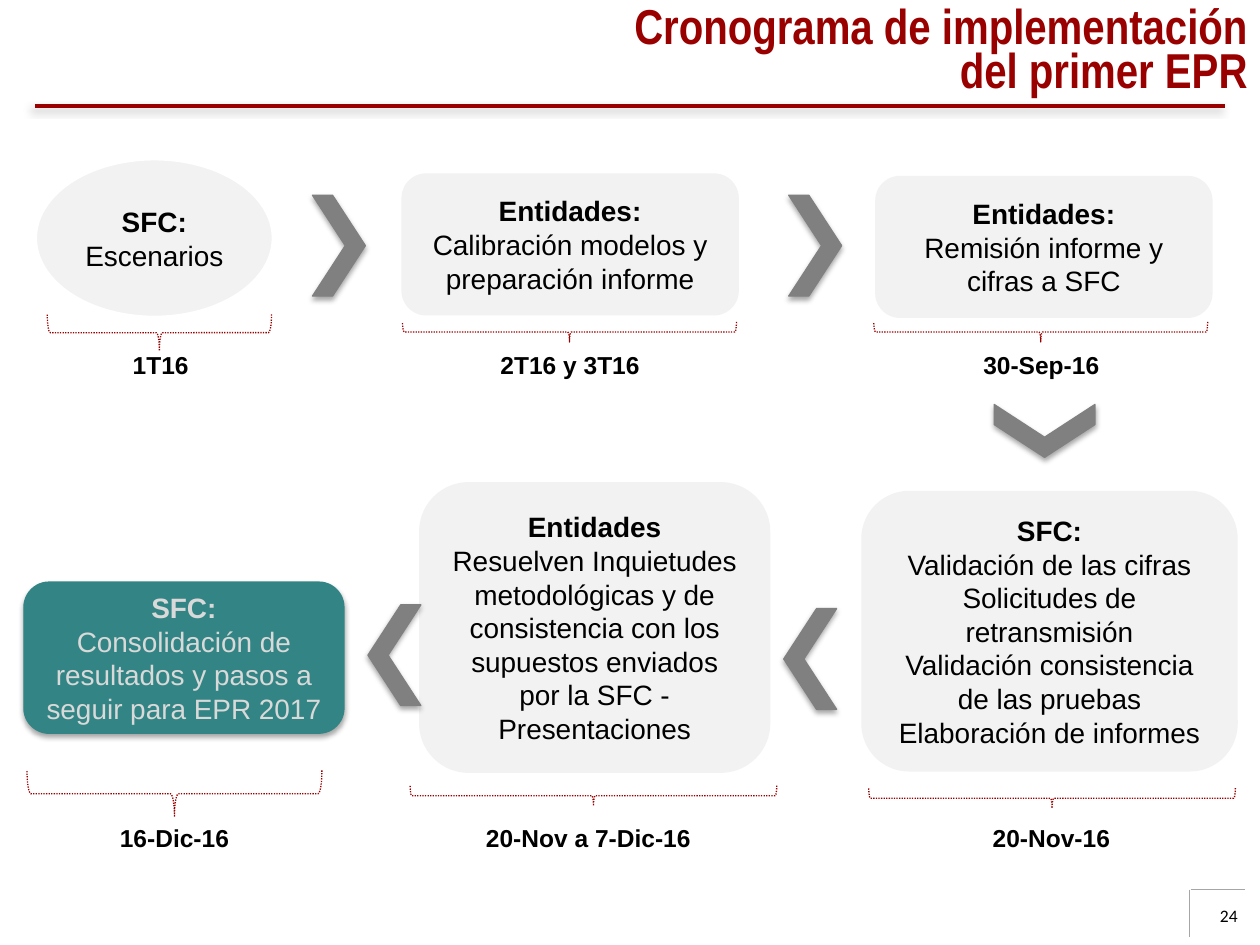
from lxml import etree
from pptx import Presentation
from pptx.enum.dml import MSO_LINE
from pptx.enum.shapes import MSO_CONNECTOR, MSO_SHAPE
from pptx.enum.text import MSO_ANCHOR, MSO_AUTO_SIZE, PP_ALIGN
from pptx.dml.color import RGBColor
from pptx.oxml import parse_xml
from pptx.oxml.ns import nsdecls, qn
from pptx.util import Pt

PX = 9144
OVAL, ROUND = MSO_SHAPE.OVAL, MSO_SHAPE.ROUNDED_RECTANGLE
CHEVRON, BRACE = MSO_SHAPE.CHEVRON, MSO_SHAPE.LEFT_BRACE
DOTS, LINE = MSO_LINE.ROUND_DOT, MSO_CONNECTOR.STRAIGHT
MID, TOP = MSO_ANCHOR.MIDDLE, MSO_ANCHOR.TOP
CENTER, RIGHT = PP_ALIGN.CENTER, PP_ALIGN.RIGHT
COLORS = {
    "red": "990000", "black": "000000", "white": "FFFFFF", "pale": "F2F2F2",
    "gray": "808080", "rule": "A6A6A6", "teal": "338585", "light": "D9D9D9",
}


def tint(name):
    return RGBColor.from_string(COLORS[name])


class Deck:
    font = "Arial"

    def __init__(self, wide, high):
        self.file = Presentation()
        self.file.slide_width, self.file.slide_height = wide * PX, high * PX
        self.slide = self.file.slides.add_slide(self.file.slide_layouts[5])
        self.shapes = self.slide.shapes

    def style(self, para, size, color, bold, align=CENTER, font=None):
        para.alignment = align
        for run in para.runs:
            run.font.name = font or self.font
            run.font.size = Pt(size)
            run.font.bold = bold
            run.font.color.rgb = tint(color)

    def shade(self, shape, blur, dist, angle, alpha):
        props = shape._element.spPr
        for old in props.findall(qn("a:effectLst")):
            props.remove(old)
        props.append(parse_xml(
            f'<a:effectLst {nsdecls("a")}><a:outerShdw blurRad="{Pt(blur)}" '
            f'dist="{Pt(dist)}" dir="{angle * 60000}" algn="ctr" rotWithShape="0">'
            f'<a:srgbClr val="{COLORS["black"]}"><a:alpha val="{alpha * 1000}"/>'
            '</a:srgbClr></a:outerShdw></a:effectLst>'))

    def title(self, text, x, y, w, h):
        shape = self.shapes.title
        shape.left, shape.top, shape.width, shape.height = [n * PX for n in (x, y, w, h)]
        frame = shape.text_frame
        frame.text = text
        frame.word_wrap = True
        frame.auto_size = MSO_AUTO_SIZE.NONE
        frame.vertical_anchor = TOP
        para = frame.paragraphs[0]
        self.style(para, 28, "red", True, RIGHT, "Arial Narrow")
        para.line_spacing = 0.75
        props = para._p.get_or_add_pPr()
        props.set("marL", str(56 * PX))
        props.set("indent", str(-56 * PX))

    def line(self, x1, y1, x2, y2, color, width):
        line = self.shapes.add_connector(LINE, x1 * PX, y1 * PX, x2 * PX, y2 * PX)
        line.line.color.rgb = tint(color)
        line.line.width = Pt(width)
        etree.SubElement(line._element.spPr, qn("a:effectLst"))
        return line

    def shape(self, kind, x, y, w, h, fill, edge, width):
        shape = self.shapes.add_shape(kind, x * PX, y * PX, w * PX, h * PX)
        shape.shadow.inherit = False
        if fill:
            shape.fill.solid()
            shape.fill.fore_color.rgb = tint(fill)
        else:
            shape.fill.background()
        shape.line.color.rgb = tint(edge)
        shape.line.width = Pt(width)
        return shape

    def box(self, kind, x, y, w, h, lines, fill="pale", edge="pale", width=2, color="black"):
        shape = self.shape(kind, x, y, w, h, fill, edge, width)
        frame = shape.text_frame
        frame.text = "\n".join(lines)
        frame.word_wrap = True
        frame.vertical_anchor = MID
        for i, para in enumerate(frame.paragraphs):
            self.style(para, 16, color, i == 0)
        return shape

    def arrow(self, x, y, turn=0):
        shape = self.shape(CHEVRON, x, y, 42, 80, "gray", "gray", 0.75)
        shape.adjustments[0] = 0.62
        shape.rotation = turn
        self.shade(shape, 3.1, 1.8, 90, 35)

    def brace(self, x, y, w, h):
        shape = self.shape(BRACE, x + (w - h) // 2, y + (h - w) // 2, h, w, None, "red", 0.75)
        shape.rotation = 270
        shape.line.dash_style = DOTS

    def label(self, text, x, y, w, h=34, size=14, bold=True, align=CENTER, font=None):
        frame = self.shapes.add_textbox(x * PX, y * PX, w * PX, h * PX).text_frame
        frame.text = text
        frame.word_wrap = True
        self.style(frame.paragraphs[0], size, "black", bold, align, font)


def main():
    deck = Deck(1000, 750)
    deck.title("Cronograma de implementación del primer EPR", 445, 2, 555, 81)
    rule = deck.line(28, 84, 972, 84, "red", 2)
    deck.shade(rule, 4, 3, 135, 40)
    deck.line(945, 706, 988, 706, "rule", 0.25)
    deck.line(944, 706, 944, 744, "rule", 0.25)
    deck.label("24", 930, 713, 62, 40, 10, False, RIGHT, "Calibri")

    deck.box(OVAL, 28, 126, 189, 126, ["SFC:", "Escenarios"], edge="white")
    for x, y, w, h, lines in (
        (320, 139, 265, 110, ["Entidades:", "Calibración modelos y preparación informe"]),
        (696, 141, 265, 110, ["Entidades:", "Remisión informe y cifras a SFC"]),
        (685, 391, 296, 220, [
            "SFC:", "Validación de las cifras", "Solicitudes de retransmisión",
            "Validación consistencia de las pruebas", "Elaboración de informes"]),
        (334, 384, 276, 228, [
            "Entidades", "Resuelven Inquietudes metodológicas y de consistencia "
            "con los supuestos enviados por la SFC - Presentaciones"]),
    ):
        deck.box(ROUND, x, y, w, h, lines)
    final = deck.box(
        ROUND, 19, 462, 254, 120,
        ["SFC:", "Consolidación de resultados y pasos a seguir para EPR 2017"],
        "teal", "teal", 0.75, "light")
    deck.shade(final, 3.1, 1.8, 90, 35)

    for x, y, turn in ((248, 155, 0), (626, 155, 0), (808, 302, 90),
                       (622, 483, 180), (292, 480, 180)):
        deck.arrow(x, y, turn)

    for x, y, w, h in ((38, 250, 178, 29), (320, 256, 265, 16), (694, 256, 265, 16),
                       (22, 612, 234, 37), (326, 624, 291, 16), (690, 626, 291, 16)):
        deck.brace(x, y, w, h)

    for text, x, y, w in (
        ("1T16", 29, 273, 197), ("2T16 y 3T16", 367, 273, 171), ("30-Sep-16", 748, 273, 157),
        ("16-Dic-16", 60, 648, 157), ("20-Nov a 7-Dic-16", 352, 648, 230),
        ("20-Nov-16", 756, 648, 157),
    ):
        deck.label(text, x, y, w)

    deck.file.save("out.pptx")


if __name__ == "__main__":
    main()
